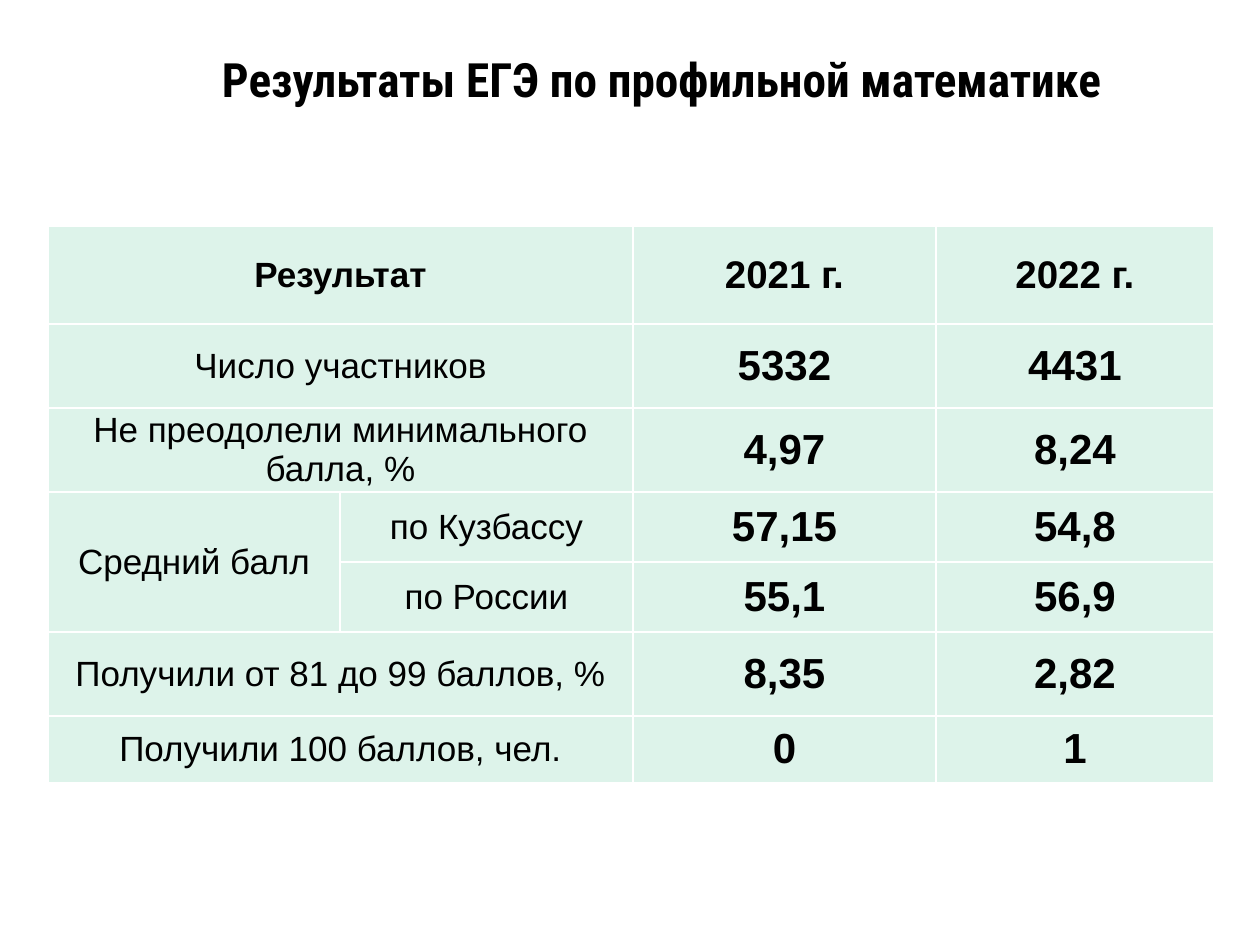
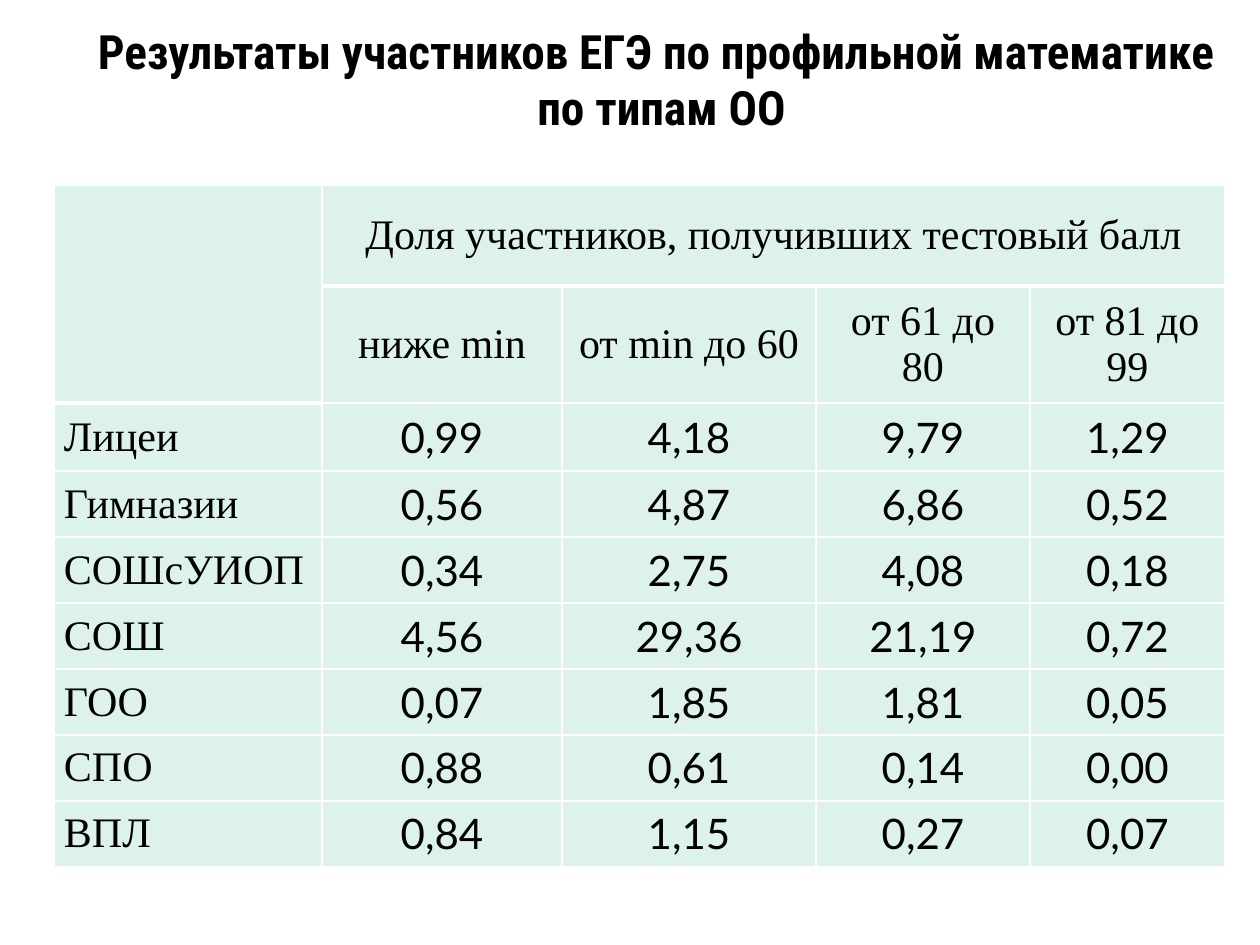
from lxml import etree
from pptx import Presentation
from pptx.dml.color import RGBColor
from pptx.enum.text import MSO_ANCHOR, MSO_AUTO_SIZE, PP_ALIGN
from pptx.oxml.ns import qn
from pptx.util import Pt

EMU_PER_INCH = 914400
PX_PER_INCH = 126
SLIDE_SIZE = (1260, 945)
TITLE_ONLY = 5
CENTER, LEFT = PP_ALIGN.CENTER, PP_ALIGN.LEFT
MIDDLE = MSO_ANCHOR.MIDDLE
NO_AUTOFIT = MSO_AUTO_SIZE.NONE

COLORS = {"text": "000000", "mint": "DDF3EA", "grid": "FFFFFF"}
TITLE_BOX = (63, 21, 1197, 115)
TITLE_FONT = {"name": "Roboto Condensed", "size": Pt(27), "bold": True}
THIN, THICK = 1, 3

LABEL = {"name": "Arial", "size": Pt(20), "bold": False}
RESULT_HEAD = {**LABEL, "bold": True}
YEAR = {**RESULT_HEAD, "size": Pt(22)}
SCORE = {**RESULT_HEAD, "size": Pt(24)}
SCHOOL = {"name": "Times New Roman", "size": Pt(24), "bold": False}
SHARE = {**SCHOOL, "name": "Lato"}

EXAM_RESULTS = [
    ["Результат", "", "2021 г.", "2022 г."],
    ["Число участников", "", "5332", "4431"],
    ["Не преодолели минимального балла, %", "", "4,97", "8,24"],
    ["Средний балл", "по Кузбассу", "57,15", "54,8"],
    ["", "по России", "55,1", "56,9"],
    ["Получили от 81 до 99 баллов, %", "", "8,35", "2,82"],
    ["Получили 100 баллов, чел.", "", "0", "1"],
]
SCHOOL_SHARES = [
    ["", "Доля участников, получивших тестовый балл", "", "", ""],
    ["", "ниже min", "от min до 60", "от 61 до 80", "от 81 до 99"],
    ["Лицеи", "0,99", "4,18", "9,79", "1,29"],
    ["Гимназии", "0,56", "4,87", "6,86", "0,52"],
    ["СОШсУИОП", "0,34", "2,75", "4,08", "0,18"],
    ["СОШ", "4,56", "29,36", "21,19", "0,72"],
    ["ГОО", "0,07", "1,85", "1,81", "0,05"],
    ["СПО", "0,88", "0,61", "0,14", "0,00"],
    ["ВПЛ", "0,84", "1,15", "0,27", "0,07"],
]


def px(length):
    return round(length * EMU_PER_INCH / PX_PER_INCH)


def apply_font(font, style):
    for attribute, value in style.items():
        setattr(font, attribute, value)
    font.color.rgb = RGBColor.from_string(COLORS["text"])


def add_titled_slide(deck, heading):
    slide = deck.slides.add_slide(deck.slide_layouts[TITLE_ONLY])
    title = slide.shapes.title
    title.left, title.top, title.width, title.height = map(px, TITLE_BOX)
    frame = title.text_frame
    frame.text = heading
    frame.auto_size = NO_AUTOFIT
    frame.vertical_anchor = MIDDLE
    paragraph = frame.paragraphs[0]
    paragraph.alignment = CENTER
    for run in paragraph.runs:
        apply_font(run.font, TITLE_FONT)
    return slide


def set_borders(cell, widths):
    properties = cell._tc.get_or_add_tcPr()
    for position, (side, width) in enumerate(widths.items()):
        line = etree.Element(qn(f"a:ln{side}"), w=str(Pt(width)))
        fill = etree.SubElement(line, qn("a:solidFill"))
        etree.SubElement(fill, qn("a:srgbClr"), val=COLORS["grid"])
        properties.insert(position, line)


def fill_cell(cell, text, style, alignment, inset):
    cell.fill.solid()
    cell.fill.fore_color.rgb = RGBColor.from_string(COLORS["mint"])
    cell.vertical_anchor = MIDDLE
    cell.margin_left = cell.margin_right = px(inset)
    cell.margin_top = cell.margin_bottom = 0
    if text:
        paragraph = cell.text_frame.paragraphs[0]
        paragraph.alignment = alignment
        run = paragraph.add_run()
        run.text = text
        apply_font(run.font, style)


def add_grid(slide, corner, widths, heights, rows, merges, look, thick_below=()):
    size = (sum(widths), sum(heights))
    table = slide.shapes.add_table(
        len(rows), len(widths), *map(px, corner + size)).table
    for column, width in zip(table.columns, widths):
        column.width = px(width)
    for row, height in zip(table.rows, heights):
        row.height = px(height)
    for r, texts in enumerate(rows):
        for c, text in enumerate(texts):
            cell = table.cell(r, c)
            fill_cell(cell, text, *look(r, c))
            top = THICK if (r - 1, c) in thick_below else THIN
            bottom = THICK if (r, c) in thick_below else THIN
            set_borders(cell, {"L": THIN, "R": THIN, "T": top, "B": bottom})
    for first, last in merges:
        table.cell(*first).merge(table.cell(*last))


def exam_look(row, column):
    if column < 2:
        style = LABEL if row else RESULT_HEAD
    else:
        style = SCORE if row else YEAR
    return style, CENTER, 9


def school_look(row, column):
    if row < 2:
        return SCHOOL, CENTER, 10
    return (SHARE, CENTER, 9) if column else (SCHOOL, LEFT, 10)


def main():
    deck = Presentation()
    deck.slide_width, deck.slide_height = map(px, SLIDE_SIZE)

    exam = add_titled_slide(deck, "Результаты ЕГЭ по профильной математике")
    wide_labels = [((r, 0), (r, 1)) for r in (0, 1, 2, 5, 6)]
    add_grid(exam, (48, 226), [292, 293, 303, 278],
             [98, 84, 84, 70, 70, 84, 67], EXAM_RESULTS,
             wide_labels + [((3, 0), (4, 0))], exam_look)

    schools = add_titled_slide(
        deck, "Результаты участников ЕГЭ по профильной математике \vпо типам ОО")
    header_edge = [(1, 0)] + [(0, c) for c in range(1, 5)]
    add_grid(schools, (54, 185), [268, 240, 254, 214, 195],
             [101, 117, 68] + [66] * 6, SCHOOL_SHARES,
             [((0, 0), (1, 0)), ((0, 1), (0, 4))], school_look, header_edge)

    deck.save("out.pptx")


if __name__ == "__main__":
    main()
